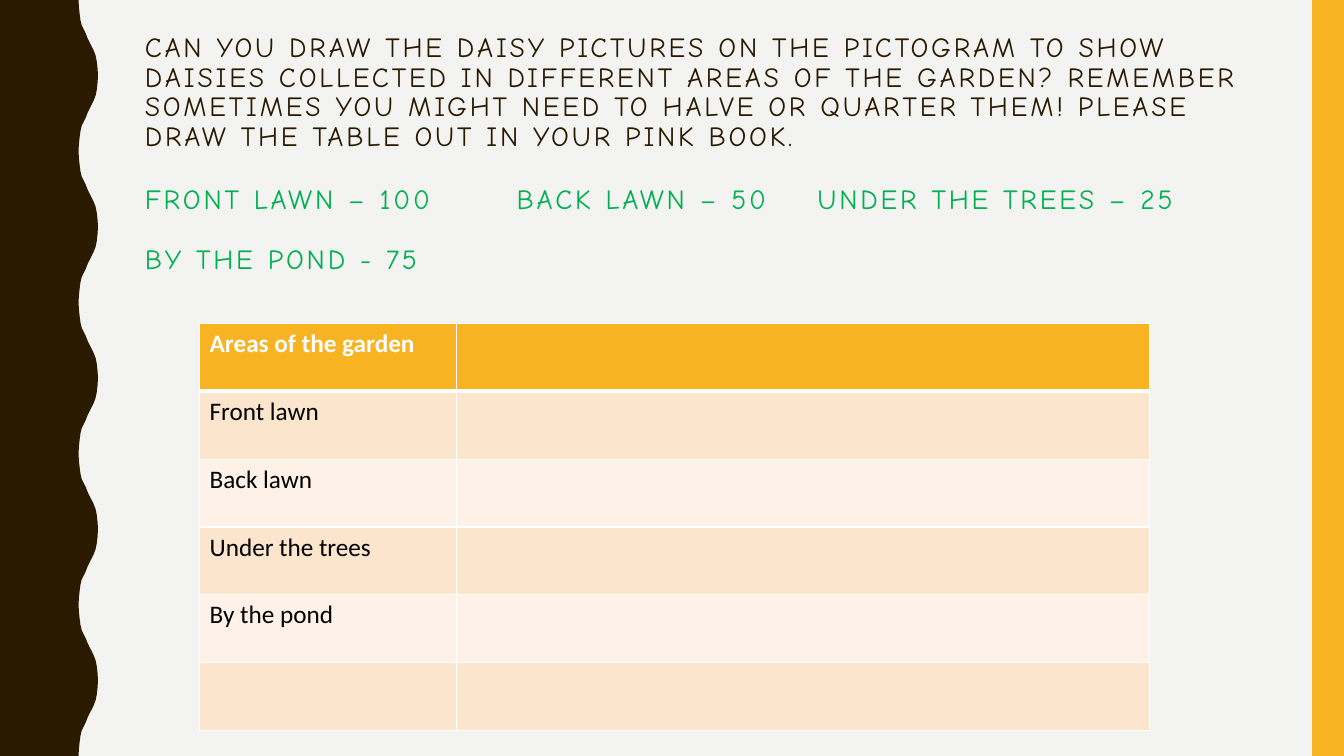
from dataclasses import dataclass

from lxml import etree
from pptx import Presentation
from pptx import util as u
from pptx.dml.color import RGBColor
from pptx.enum import shapes, text
from pptx.oxml import ns

BROWN, GOLD, GREEN, WHITE = "2A1A00", "F8B323", "00B050", "FFFFFF"
BANDS = ("FCE5CD", "FEF2E8")
WIDTH, HEIGHT = 33.87, 19.05
WAVE = 3.81  # height of one wave of the side band

# (x, y) from the trough to the crest of a wave
HALF_WAVE = [
    (1.98, 0), (1.99, 0.18), (2.01, 0.36), (2.03, 0.51), (2.06, 0.64),
    (2.11, 0.74), (2.16, 0.84), (2.21, 0.97), (2.26, 1.07), (2.31, 1.17),
    (2.36, 1.27), (2.41, 1.4), (2.44, 1.55), (2.46, 1.73), (2.47, 1.9),
]


@dataclass
class Line:
    words: str
    colour: str
    before: float = 0


TITLE = [
    Line("CAN YOU DRAW THE DAISY PICTURES ON THE PICTOGRAM TO SHOW DAISIES "
         "COLLECTED IN DIFFERENT AREAS OF THE GARDEN? REMEMBER SOMETIMES YOU "
         "MIGHT NEED TO HALVE OR QUARTER THEM! PLEASE DRAW THE TABLE OUT IN "
         "YOUR PINK BOOK.", BROWN),
    Line("FRONT LAWN – 100\tBACK LAWN – 50\tUNDER THE TREES – 25", GREEN, 23.6),
    Line("BY THE POND - 75", GREEN, 21.4),
]
TAB_STOPS = (9.37, 16.95)
ROWS = ["Areas of the garden", "Front lawn", "Back lawn", "Under the trees",
        "By the pond", ""]


def rgb(colour: str) -> RGBColor:
    return RGBColor.from_string(colour)


def paint(sp, colour: str) -> None:
    sp.shadow.inherit = False
    sp.fill.solid()
    sp.fill.fore_color.rgb = rgb(colour)
    sp.line.fill.background()


def add_run(p, words: str, font: str, size: float, colour: str):
    r = p.add_run()
    r.text = words
    r.font.name, r.font.size = font, u.Pt(size)
    r.font.color.rgb = rgb(colour)
    return r


def add_wavy_band(s) -> None:
    wave = HALF_WAVE + [(x, WAVE - y) for x, y in reversed(HALF_WAVE)]
    edge = [(x, y + i * WAVE) for i in range(5) for x, y in wave]
    outline = [(u.Cm(x), u.Cm(y)) for x, y in edge + [(0, HEIGHT)]]
    paint_me = s.shapes.build_freeform(0, 0)
    paint_me.add_line_segments(outline, close=True)
    paint(paint_me.convert_to_shape(), BROWN)


def add_title(s) -> None:
    box = s.shapes.add_textbox(u.Cm(3.4), u.Cm(0.71), u.Cm(28.27), u.Cm(4.14))
    tf = box.text_frame
    tf.word_wrap = True
    tf.vertical_anchor = text.MSO_ANCHOR.TOP
    for i, line in enumerate(TITLE):
        p = tf.add_paragraph() if i else tf.paragraphs[0]
        p.line_spacing, p.space_before = 0.9, u.Pt(line.before)
        r = add_run(p, line.words, "Comic Neue", 19.8, line.colour)
        r.font._element.set("spc", "200")
        if "\t" in line.words:
            tabs = etree.SubElement(p._p.get_or_add_pPr(), ns.qn("a:tabLst"))
            for stop in TAB_STOPS:
                etree.SubElement(tabs, ns.qn("a:tab"),
                                 pos=str(u.Cm(stop)), algn="l")


def set_border(cell, side: str, width: float) -> None:
    ln = etree.SubElement(cell._tc.get_or_add_tcPr(), ns.qn(f"a:{side}"),
                          w=str(u.Pt(width)))
    fill = etree.SubElement(ln, ns.qn("a:solidFill"))
    etree.SubElement(fill, ns.qn("a:srgbClr"), val=WHITE)


def add_pictogram(s) -> None:
    frame = s.shapes.add_table(len(ROWS), 2, u.Cm(5.03), u.Cm(8.15),
                               u.Cm(23.93), u.Cm(10.26))
    table = frame.table
    for column, width in zip(table.columns, (6.48, 17.45)):
        column.width = u.Cm(width)
    for i, label in enumerate(ROWS):
        table.rows[i].height = u.Cm(1.71)
        for j, words in enumerate((label, "")):
            cell = table.cell(i, j)
            for side in ("lnL", "lnR", "lnT", "lnB"):
                thick = (i, side) in ((0, "lnB"), (1, "lnT"))
                set_border(cell, side, 3 if thick else 1)
            cell.fill.solid()
            cell.fill.fore_color.rgb = rgb(BANDS[(i - 1) % 2] if i else GOLD)
            if words:
                r = add_run(cell.text_frame.paragraphs[0], words, "Calibri",
                            18, "000000" if i else WHITE)
                r.font.bold = i == 0


def main() -> None:
    prs = Presentation()
    prs.slide_width, prs.slide_height = u.Cm(WIDTH), u.Cm(HEIGHT)
    s = prs.slides.add_slide(prs.slide_layouts[6])
    s.background.fill.solid()
    s.background.fill.fore_color.rgb = rgb("F3F3F2")

    # Side bands
    add_wavy_band(s)
    bar = s.shapes.add_shape(shapes.MSO_SHAPE.RECTANGLE, u.Cm(33.07), 0,
                             u.Cm(0.8), u.Cm(HEIGHT))
    paint(bar, GOLD)

    # Task and the table to fill in
    add_title(s)
    add_pictogram(s)
    prs.save("out.pptx")


if __name__ == "__main__":
    main()
